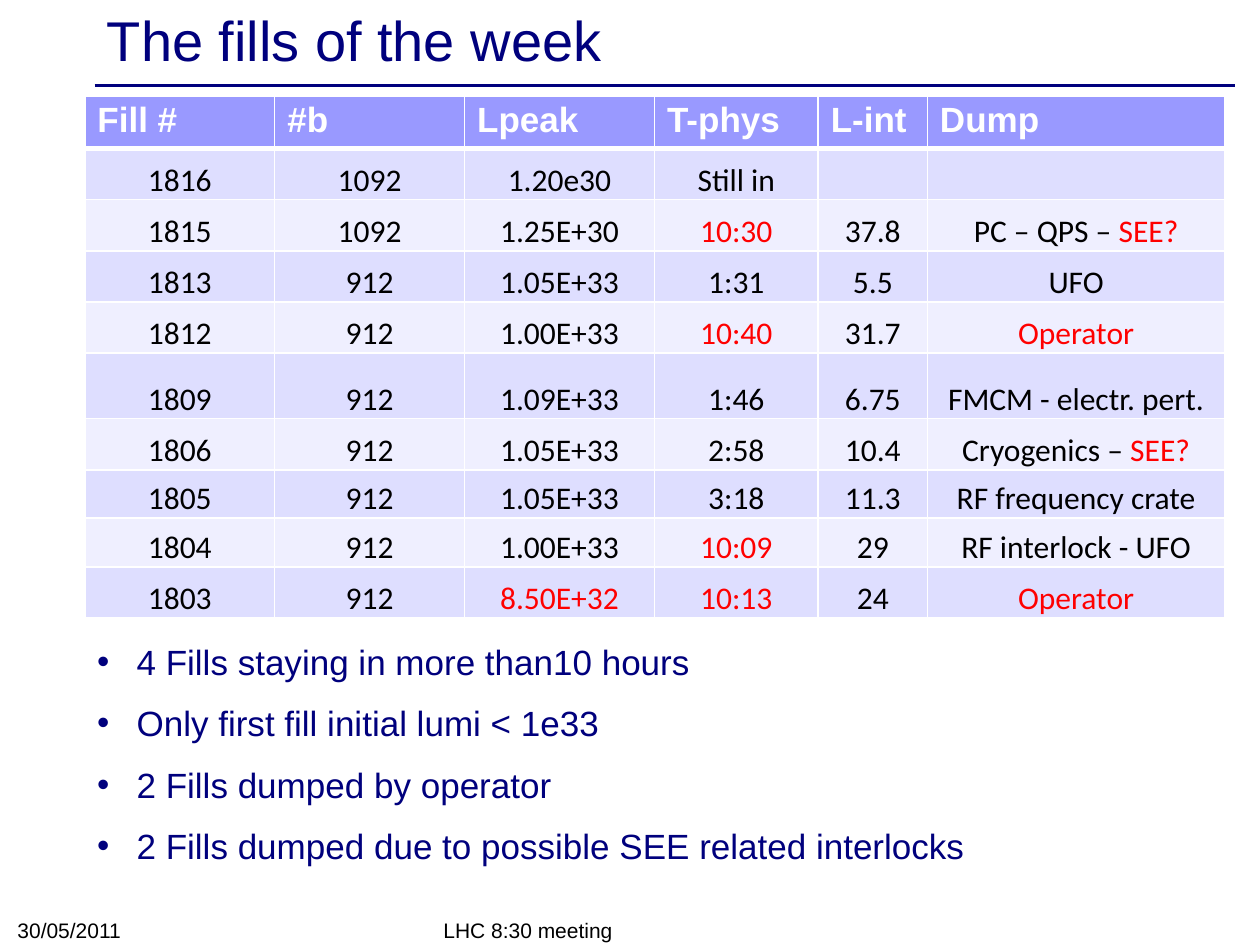
from lxml import etree
from pptx import Presentation
from pptx.dml.color import RGBColor
from pptx.enum.shapes import MSO_CONNECTOR
from pptx.enum.text import MSO_ANCHOR, PP_ALIGN
from pptx.oxml.ns import qn
from pptx.util import Pt

LEFT, CENTER = PP_ALIGN.LEFT, PP_ALIGN.CENTER
TOP, MIDDLE, BOTTOM = MSO_ANCHOR.TOP, MSO_ANCHOR.MIDDLE, MSO_ANCHOR.BOTTOM
STRAIGHT = MSO_CONNECTOR.STRAIGHT

NAVY, BLACK, RED, WHITE = "00007D", "000000", "FF0000", "FFFFFF"
HEADER_FILL, BAND_FILLS = "9999FF", ("DEDEFF", "EFEFFF")
RED_MARK = "|"

HEADINGS = ["Fill #", "#b", "Lpeak", "T-phys", "L-int", "Dump"]
FILLS = [
    ["1816", "1092", "1.20e30", "Still in", "", ""],
    ["1815", "1092", "1.25E+30", "|10:30", "37.8", "PC – QPS – |SEE?"],
    ["1813", "912", "1.05E+33", "1:31", "5.5", "UFO"],
    ["1812", "912", "1.00E+33", "|10:40", "31.7", "|Operator"],
    ["1809", "912", "1.09E+33", "1:46", "6.75", "FMCM - electr. pert."],
    ["1806", "912", "1.05E+33", "2:58", "10.4", "Cryogenics – |SEE?"],
    ["1805", "912", "1.05E+33", "3:18", "11.3", "RF frequency crate"],
    ["1804", "912", "1.00E+33", "|10:09", "29", "RF interlock - UFO"],
    ["1803", "912", "|8.50E+32", "|10:13", "24", "|Operator"],
]
COLUMN_WIDTHS = [108.5, 108.5, 108.5, 93.6, 62.4, 170]
ROW_HEIGHTS = [29.2] * 5 + [37.6, 29.2, 27.6, 28, 29.2]
REMARKS = [
    "4 Fills staying in more than10 hours",
    "Only first fill initial lumi < 1e33",
    "2 Fills dumped by operator",
    "2 Fills dumped due to possible SEE related interlocks",
]


def color(value):
    """Turn a hex string into a colour."""
    return RGBColor.from_string(value)


def style_font(font, name, size, hex_color, bold=False):
    """Set the typeface, size, colour and weight of a font."""
    font.name, font.size, font.bold = name, Pt(size), bold
    font.color.rgb = color(hex_color)


def add_text(page, box, lines, size, hex_color, anchor=TOP):
    """Place a left-aligned text box and return its paragraphs."""
    frame = page.shapes.add_textbox(*map(Pt, box)).text_frame
    frame.word_wrap = True
    frame.vertical_anchor = anchor
    frame.text = "\n".join(lines)
    for para in frame.paragraphs:
        para.alignment = LEFT
        for span in para.runs:
            style_font(span.font, "Arial", size, hex_color)
    return frame.paragraphs


def add_heading(page, box):
    """Write the title with the rule beneath it."""
    left, top, width, height = box
    add_text(page, box, ["The fills of the week"], 32, NAVY, MIDDLE)
    rule_top = top + height + 6
    rule = page.shapes.add_connector(
        STRAIGHT, Pt(left), Pt(rule_top), Pt(left + width + 3.6), Pt(rule_top))
    rule.line.color.rgb = color(NAVY)
    rule.line.width = Pt(2)
    etree.SubElement(rule._element.spPr, qn("a:effectLst"))


def set_cell(cell, fill, bottom_width):
    """Give a cell its fill and white borders."""
    properties = cell._tc.get_or_add_tcPr()
    for side, width in (("L", 1), ("R", 1), ("T", 1), ("B", bottom_width)):
        border = etree.SubElement(properties, qn("a:ln" + side), w=str(Pt(width)))
        paint = etree.SubElement(border, qn("a:solidFill"))
        etree.SubElement(paint, qn("a:srgbClr"), val=WHITE)
    cell.fill.solid()
    cell.fill.fore_color.rgb = color(fill)


def fill_heading_cell(cell, text):
    """Write one column heading."""
    set_cell(cell, HEADER_FILL, 3)
    cell.margin_top = cell.margin_bottom = Pt(3)
    para = cell.text_frame.paragraphs[0]
    para.text = text
    para.alignment = LEFT
    style_font(para.runs[0].font, "Arial", 20, WHITE, True)


def fill_body_cell(cell, text, fill):
    """Write one value, with the part after the mark in red."""
    set_cell(cell, fill, 1)
    cell.vertical_anchor = BOTTOM
    cell.margin_left = cell.margin_right = cell.margin_top = Pt(0.75)
    cell.margin_bottom = 0
    para = cell.text_frame.paragraphs[0]
    para.alignment = CENTER
    plain, _, marked = text.partition(RED_MARK)
    for part, hex_color in ((plain, BLACK), (marked, RED)):
        if part:
            span = para.add_run()
            span.text = part
            style_font(span.font, "Calibri", 18, hex_color)


def add_fill_table(page, box):
    """Build the table of fills."""
    table = page.shapes.add_table(
        len(ROW_HEIGHTS), len(COLUMN_WIDTHS), *map(Pt, box)).table
    for column, width in zip(table.columns, COLUMN_WIDTHS):
        column.width = Pt(width)
    for row, height in zip(table.rows, ROW_HEIGHTS):
        row.height = Pt(height)
    for column, text in enumerate(HEADINGS):
        fill_heading_cell(table.cell(0, column), text)
    for row, values in enumerate(FILLS):
        for column, text in enumerate(values):
            fill_body_cell(table.cell(row + 1, column), text, BAND_FILLS[row % 2])


def add_remarks(page, box):
    """List the remarks as bullets."""
    for index, para in enumerate(add_text(page, box, REMARKS, 20, NAVY)):
        properties = para._p.get_or_add_pPr()
        properties.set("marL", str(Pt(22.5)))
        properties.set("indent", str(Pt(-22.5)))
        etree.SubElement(properties, qn("a:buFont"), typeface="Arial")
        etree.SubElement(properties, qn("a:buChar"), char="•")
        if index:
            para.space_before = Pt(11)


def add_footer(page, box):
    """Write the date and the meeting name along the bottom."""
    left, top, width, height = box
    for offset, text in ((0, "30/05/2011"), (243.4, "LHC 8:30 meeting")):
        add_text(page, (left + offset, top, width, height), [text], 12, BLACK, BOTTOM)


def main():
    """Build the slide and save it."""
    deck = Presentation()
    deck.slide_width, deck.slide_height = Pt(720), Pt(540)
    page = deck.slides.add_slide(deck.slide_layouts[6])
    add_heading(page, (54, 2, 648, 41))
    add_footer(page, (2.9, 521.5, 228, 20.5))
    add_fill_table(page, (48.5, 54.9, sum(COLUMN_WIDTHS), sum(ROW_HEIGHTS)))
    add_remarks(page, (48.5, 362.5, 623.5, 140.5))
    deck.save("out.pptx")


if __name__ == "__main__":
    main()
